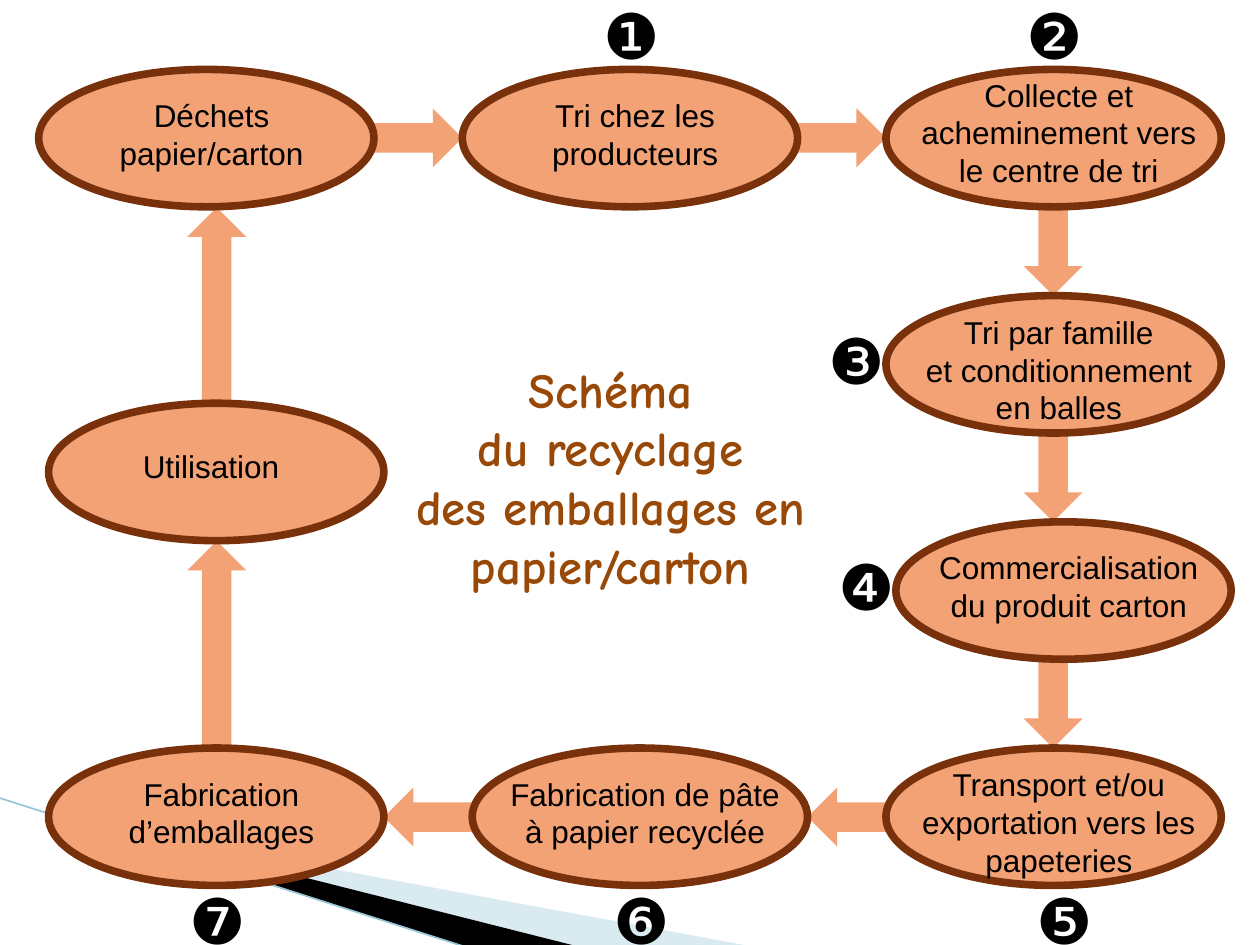
from lxml.etree import SubElement
from pptx import Presentation
from pptx.dml.color import RGBColor
from pptx.enum.shapes import MSO_CONNECTOR, MSO_SHAPE
from pptx.enum.text import MSO_ANCHOR, MSO_AUTO_SIZE, PP_ALIGN
from pptx.oxml.ns import qn
from pptx.util import Cm, Pt

WHITE = RGBColor(0xFF, 0xFF, 0xFF)
BLACK = RGBColor(0x00, 0x00, 0x00)
SALMON = RGBColor(0xF3, 0xA2, 0x76)
BROWN = RGBColor(0x78, 0x31, 0x0B)
TITLE_BROWN = RGBColor(0x98, 0x48, 0x07)
PALE_BLUE = RGBColor(0xA0, 0xCB, 0xDC)
LINE_BLUE = RGBColor(0x97, 0xC5, 0xD8)

OVAL_WIDTH, OVAL_HEIGHT = 6.76, 2.77
LABEL_WIDTH = 6.15
LABEL_HEIGHTS = {1: 1.02, 2: 1.8, 3: 2.57}
NUMBER_WIDTH, NUMBER_HEIGHT = 1.6, 1.8
ARROW_LENGTH, ARROW_BREADTH = 1.78, 1.19
LEFT, MIDDLE, RIGHT = 0.78, 9.32, 17.86
SHIFT = 0.2
ROWS = [1.4 + 4.56 * row for row in range(4)]


class RecyclingDiagram:
    def __init__(self, page):
        self.page = page
        self.font = "Arial"
        background = page.background.fill
        background.solid()
        background.fore_color.rgb = WHITE

    def text(self, parent, left, top, width, height, paragraphs, size,
             color=BLACK, font=None, bold=False, anchor=MSO_ANCHOR.TOP,
             fit=MSO_AUTO_SIZE.SHAPE_TO_FIT_TEXT):
        box = parent.add_textbox(Cm(left), Cm(top), Cm(width), Cm(height))
        frame = box.text_frame
        frame.word_wrap = True
        frame.auto_size = fit
        frame.vertical_anchor = anchor
        for index, content in enumerate(paragraphs):
            para = frame.add_paragraph() if index else frame.paragraphs[0]
            para.alignment = PP_ALIGN.CENTER
            for position, line in enumerate(content.split("\n")):
                if position:
                    para.add_line_break()
                span = para.add_run()
                span.text = line
                span.font.name = font or self.font
                span.font.size = Pt(size)
                span.font.bold = bold
                span.font.color.rgb = color

    def stage(self, left, top, label, lines, drop, inset=0.41):
        group = self.page.shapes.add_group_shape()
        oval = group.shapes.add_shape(MSO_SHAPE.OVAL, Cm(left), Cm(top),
                                      Cm(OVAL_WIDTH), Cm(OVAL_HEIGHT))
        oval.shadow.inherit = False
        oval.fill.solid()
        oval.fill.fore_color.rgb = SALMON
        oval.line.color.rgb = BROWN
        oval.line.width = Pt(4.33)
        self.text(group.shapes, left + inset, top + drop, LABEL_WIDTH,
                  LABEL_HEIGHTS[lines], [label], 18)

    def arrow(self, center_x, center_y, rotation, length=ARROW_LENGTH):
        arrow = self.page.shapes.add_shape(
            MSO_SHAPE.RIGHT_ARROW, Cm(center_x - length / 2),
            Cm(center_y - ARROW_BREADTH / 2), Cm(length), Cm(ARROW_BREADTH))
        arrow.rotation = rotation
        arrow.shadow.inherit = False
        arrow.fill.solid()
        arrow.fill.fore_color.rgb = SALMON
        arrow.line.fill.background()

    def number(self, left, top, symbol):
        self.text(self.page.shapes, left, top, NUMBER_WIDTH, NUMBER_HEIGHT,
                  [symbol], 36)

    def title(self, left, top, width, height, paragraphs):
        self.text(self.page.shapes, left, top, width, height, paragraphs, 28,
                  TITLE_BROWN, "Comic Neue", True, MSO_ANCHOR.MIDDLE,
                  MSO_AUTO_SIZE.NONE)

    def wedge(self, points, color, opacity=100):
        corners = [(Cm(x), Cm(y)) for x, y in points]
        builder = self.page.shapes.build_freeform(*corners[0])
        builder.add_line_segments(corners[1:], close=True)
        wedge = builder.convert_to_shape()
        wedge.shadow.inherit = False
        wedge.fill.solid()
        wedge.fill.fore_color.rgb = color
        wedge.line.fill.background()
        if opacity < 100:
            shade = wedge.element.spPr.find(qn("a:solidFill"))[0]
            SubElement(shade, qn("a:alpha")).set("val", str(opacity * 1000))

    def line(self, start, end):
        line = self.page.shapes.add_connector(
            MSO_CONNECTOR.STRAIGHT, *(Cm(value) for value in start + end))
        line.line.color.rgb = LINE_BLUE
        line.line.width = Pt(0.95)
        SubElement(line.element.spPr, qn("a:effectLst"))


def main():
    deck = Presentation()
    deck.slide_width, deck.slide_height = Cm(25.4), Cm(19.05)
    diagram = RecyclingDiagram(deck.slides.add_slide(deck.slide_layouts[6]))

    diagram.wedge([(1.4, 16.54), (15.11, 19.07), (11.58, 19.07), (1.4, 16.51)],
                  PALE_BLUE, 40)
    diagram.wedge([(1.35, 16.48), (11.61, 19.07), (9.45, 19.1), (1.37, 16.51)],
                  BLACK)
    diagram.line((-0.03, 16.08), (9.42, 19.1))

    for center_x in (8.43, 16.97):
        diagram.arrow(center_x, 2.78, 0)
        diagram.arrow(center_x + SHIFT, 16.47, 180)
    for center_y in (5.07, 9.63, 14.19):
        diagram.arrow(21.23, center_y, 90)
    diagram.arrow(4.37, 12.99, 270, 4.17)
    diagram.arrow(4.37, 6.16, 270, 3.96)

    diagram.title(7.75, 6.93, 9.12, 5.36,
                  ["Schéma\ndu recyclage", "des emballages en papier/carton"])

    for left, top, symbol in [
        (11.91, -0.2, "❶"), (20.45, -0.2, "❷"), (16.46, 6.35, "❸"),
        (16.66, 10.92, "❹"), (20.65, 17.65, "❺"), (12.12, 17.65, "❻"),
        (3.58, 17.65, "❼"),
    ]:
        diagram.number(left, top, symbol)

    for left, top, label, lines, drop in [
        (LEFT, ROWS[0], "Déchets\npapier/carton", 2, 0.41),
        (MIDDLE, ROWS[0], "Tri chez les producteurs", 2, 0.41),
        (RIGHT, ROWS[0], "Collecte et acheminement vers le centre de tri", 3, 0),
        (RIGHT, ROWS[1], "Tri par famille\net conditionnement en balles", 3, 0.22),
        (RIGHT + SHIFT, ROWS[2], "Commercialisation du produit carton", 2, 0.41),
        (RIGHT, ROWS[3], "Transport et/ou exportation vers les papeteries", 3, 0.22),
        (MIDDLE + SHIFT, ROWS[3], "Fabrication de pâte à papier recyclée", 2, 0.41),
        (LEFT + SHIFT, ROWS[3], "Fabrication d’emballages", 2, 0.41),
    ]:
        diagram.stage(left, top, label, lines, drop)
    diagram.stage(LEFT + SHIFT, 8.13, "Utilisation", 1, 0.76, 0.2)

    deck.save("out.pptx")


if __name__ == "__main__":
    main()
